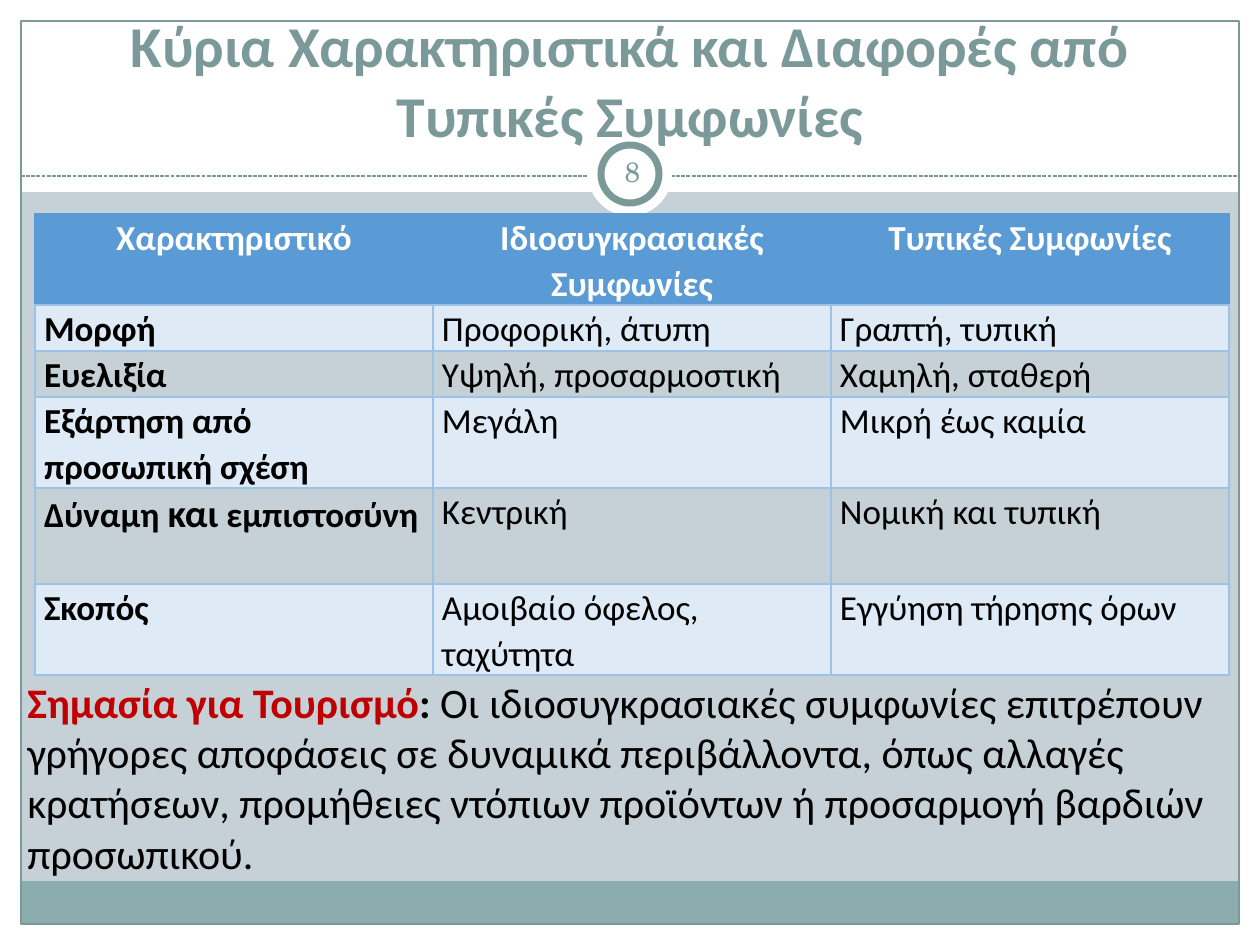
from lxml.etree import SubElement
from pptx import Presentation
from pptx.dml.color import RGBColor
from pptx.enum.dml import MSO_LINE
from pptx.enum.shapes import MSO_CONNECTOR, MSO_SHAPE
from pptx.enum.text import MSO_ANCHOR, MSO_AUTO_SIZE, PP_ALIGN
from pptx.oxml.ns import qn
from pptx.util import Emu, Pt

PX_PER_INCH = 126
WIDTH, HEIGHT, MARGIN = 1260, 945, 21
COLOURS = {
    "background": "C5D1D7", "white": "FFFFFF", "black": "000000",
    "accent": "7C999A", "footer": "8CADAE", "emphasis": "C00000",
    "header": "5B9BD5", "band": "DEEAF6", "grid": "9CC2E5",
}
ROW_HEIGHTS = [91, 46, 46, 91, 96, 91]
COLUMN_WIDTH = 398
# A cell is a text, or a list of (text, size) runs.
ROWS = [
    ["Χαρακτηριστικό", "Ιδιοσυγκρασιακές Συμφωνίες", "Τυπικές Συμφωνίες"],
    ["Μορφή", "Προφορική, άτυπη", "Γραπτή, τυπική"],
    ["Ευελιξία", "Υψηλή, προσαρμοστική", "Χαμηλή, σταθερή"],
    ["Εξάρτηση από προσωπική σχέση", "Μεγάλη", "Μικρή έως καμία"],
    [[("Δύναμη ", 20), ("και", 22), (" εμπιστοσύνη", 20)], "Κεντρική", "Νομική και τυπική"],
    ["Σκοπός", "Αμοιβαίο όφελος, ταχύτητα", "Εγγύηση τήρησης όρων"],
]
NOTE = [
    ("Σημασία για Τουρισμό", "emphasis", True),
    (":", "black", True),
    (" Οι ιδιοσυγκρασιακές συμφωνίες επιτρέπουν γρήγορες αποφάσεις σε δυναμικά "
     "περιβάλλοντα, όπως αλλαγές κρατήσεων, προμήθειες ντόπιων προϊόντων ή "
     "προσαρμογή βαρδιών προσωπικού.", "black", False),
]


def px(length):
    return Emu(round(length * 914400 / PX_PER_INCH))


def colour(name):
    return RGBColor.from_string(COLOURS[name])


def style_font(font, size, name, bold=False, face="Calibri"):
    font.name, font.size, font.bold = face, Pt(size), bold
    font.color.rgb = colour(name)


def add_panel(slide, box, fill=None, line=None, weight=0.75, kind=MSO_SHAPE.RECTANGLE):
    panel = slide.shapes.add_shape(kind, *map(px, box))
    panel.shadow.inherit = False
    if fill:
        panel.fill.solid()
        panel.fill.fore_color.rgb = colour(fill)
    else:
        panel.fill.background()
    if line:
        panel.line.color.rgb = colour(line)
        panel.line.width = Pt(weight)
    else:
        panel.line.fill.background()


def add_divider(slide, y):
    divider = slide.shapes.add_connector(
        MSO_CONNECTOR.STRAIGHT, px(MARGIN), px(y), px(WIDTH - MARGIN), px(y))
    divider.line.color.rgb = colour("accent")
    divider.line.width = Pt(0.75)
    divider.line.dash_style = MSO_LINE.SQUARE_DOT
    SubElement(divider._element.spPr, qn("a:effectLst"))


def add_frame(slide):
    inner_width = WIDTH - 2 * MARGIN
    for box in [(0, HEIGHT - MARGIN, WIDTH, MARGIN), (0, 0, WIDTH, 192),
                (0, 0, MARGIN, HEIGHT), (WIDTH - MARGIN, 0, MARGIN, HEIGHT)]:
        add_panel(slide, box, "white")
    add_panel(slide, (MARGIN, 881, inner_width, 43), "footer")
    add_panel(slide, (MARGIN, MARGIN, inner_width, HEIGHT - 2 * MARGIN), line="accent")
    add_divider(slide, 176)
    add_panel(slide, (588, 132, 84, 84), "white", kind=MSO_SHAPE.OVAL)
    add_panel(slide, (601, 145, 58, 58), "white", "accent", 4, MSO_SHAPE.OVAL)


def place_title(slide, text):
    """Fill the title placeholder and bring it in front of the frame."""
    title = slide.shapes.title
    title.left, title.top, title.width, title.height = map(px, (42, 31, 1176, 124))
    frame = title.text_frame
    frame.text = text
    frame.auto_size = MSO_AUTO_SIZE.NONE
    frame.vertical_anchor = MSO_ANCHOR.BOTTOM
    paragraph = frame.paragraphs[0]
    paragraph.alignment = PP_ALIGN.CENTER
    style_font(paragraph.font, 33, "accent", True)
    slide.shapes._spTree.append(title._element)


def add_text_frame(slide, box):
    frame = slide.shapes.add_textbox(*map(px, box)).text_frame
    frame.word_wrap = True
    return frame


def add_page_number(slide, number):
    frame = add_text_frame(slide, (601, 141, 63, 60))
    frame.margin_left = frame.margin_right = frame.margin_top = frame.margin_bottom = px(6)
    frame.vertical_anchor = MSO_ANCHOR.MIDDLE
    frame.text = number
    paragraph = frame.paragraphs[0]
    paragraph.alignment = PP_ALIGN.CENTER
    style_font(paragraph.font, 16, "accent", face="TeX Gyre Schola")


def add_note(slide):
    paragraph = add_text_frame(slide, (15, 670, 1221, 228)).paragraphs[0]
    paragraph.space_before = Pt(5)
    for text, name, bold in NOTE:
        run = paragraph.add_run()
        run.text = text
        style_font(run.font, 24, name, bold)


def set_borders(cell, name):
    properties = cell._tc.get_or_add_tcPr()
    for side in ("a:lnL", "a:lnR", "a:lnT", "a:lnB"):
        line = SubElement(properties, qn(side), w=str(Pt(1)))
        fill = SubElement(line, qn("a:solidFill"))
        SubElement(fill, qn("a:srgbClr"), val=COLOURS[name])


def fill_cell(cell, content, row, column):
    is_header = row == 0
    set_borders(cell, "header" if is_header else "grid")
    if is_header or row % 2:
        cell.fill.solid()
        cell.fill.fore_color.rgb = colour("header" if is_header else "band")
    else:
        cell.fill.background()
    cell.margin_left = cell.margin_right = px(9)
    cell.margin_top = cell.margin_bottom = 0
    paragraph = cell.text_frame.paragraphs[0]
    paragraph.line_spacing = 1.07
    paragraph.alignment = PP_ALIGN.CENTER if is_header else PP_ALIGN.LEFT
    runs = [(content, 20)] if isinstance(content, str) else content
    for text, size in runs:
        run = paragraph.add_run()
        run.text = text
        style_font(run.font, size, "white" if is_header else "black",
                   is_header or column == 0)


def add_comparison(slide):
    columns = len(ROWS[0])
    box = (35, 214, COLUMN_WIDTH * columns, sum(ROW_HEIGHTS))
    table = slide.shapes.add_table(len(ROWS), columns, *map(px, box)).table
    table.first_row = table.horz_banding = False
    for column in table.columns:
        column.width = px(COLUMN_WIDTH)
    for r, (height, contents) in enumerate(zip(ROW_HEIGHTS, ROWS)):
        table.rows[r].height = px(height)
        for c, content in enumerate(contents):
            fill_cell(table.cell(r, c), content, r, c)


def main():
    presentation = Presentation()
    presentation.slide_width, presentation.slide_height = px(WIDTH), px(HEIGHT)
    slide = presentation.slides.add_slide(presentation.slide_layouts[5])
    slide.background.fill.solid()
    slide.background.fill.fore_color.rgb = colour("background")
    add_frame(slide)
    place_title(slide, "Κύρια Χαρακτηριστικά και Διαφορές από Τυπικές Συμφωνίες")
    add_note(slide)
    add_page_number(slide, "8")
    add_comparison(slide)
    presentation.save("out.pptx")


if __name__ == "__main__":
    main()
